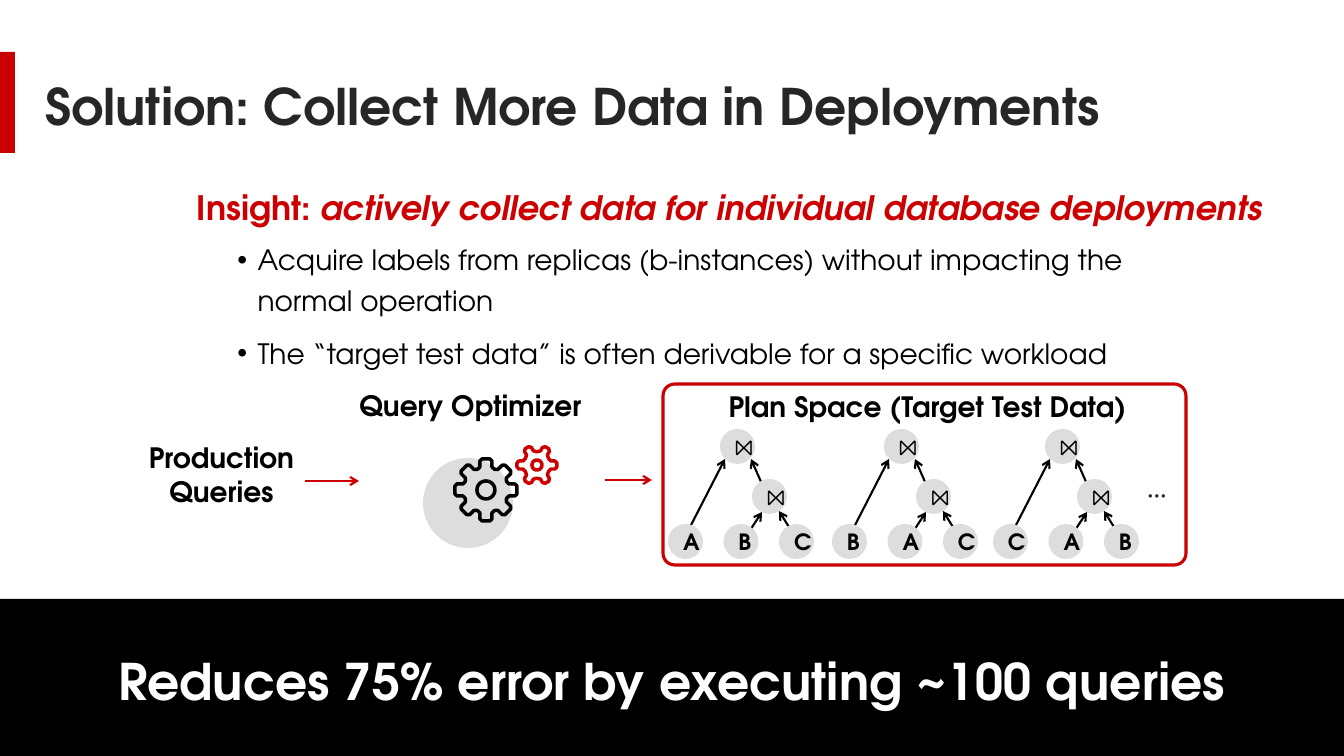
from math import cos, sin, pi
from lxml.etree import SubElement
from pptx import Presentation
from pptx.dml.color import RGBColor
from pptx.enum.shapes import MSO_CONNECTOR, MSO_SHAPE
from pptx.enum.text import MSO_ANCHOR, MSO_AUTO_SIZE, PP_ALIGN
from pptx.oxml.ns import qn
from pptx.util import Pt

FONT = "TeX Gyre Adventor"
HEX = {"bar": "C80000", "red": "CC0000", "black": "000000", "white": "FFFFFF",
       "ink": "262626", "grey": "DDDDDD"}

TITLE = "Solution: Collect More Data in Deployments"
POINTS = [
    "Acquire labels from replicas (b-instances) without impacting the normal operation",
    "The “target test data” is often derivable for a specific workload",
]
INSIGHT = ("Insight: ", "actively collect data for individual database deployments")
CLAIM = "Reduces 75% error by executing ~100 queries"

# Labels: box, lines, size, colour
LABELS = [
    ((47, 645, 1249, 72), [CLAIM], 36, "white"),
    ((342, 384, 257, 44), ["Query Optimizer"], 20, "black"),
    ((705, 385, 445, 44), ["Plan Space (Target Test Data)"], 20, "black"),
    ((93, 436, 257, 78), ["Production", "Queries"], 20, "black"),
]
FLOWS = [(305, 481, 359, 481), (605, 480, 652, 480)]

# Plan trees: left edge and leaf names; nodes and arrows are relative to the left edge
TREES = [(668, "ABC"), (832, "BAC"), (993, "CAB")]
NODE = 35
JOINS = [(52, 429), (84, 479)]
LEAF_Y, LEAF_GAP = 524, 55.5
EDGES = [(20, 531, 57, 459), (94, 484, 83, 459),
         (121, 527, 111, 511), (77, 538, 94, 512)]

# Gears: centre, teeth, half a tooth as (out, across), hub radius, colour
GEARS = [
    ((486, 490), 8, [(21, 8), (23, 6), (29, 6), (31, 4)], 9, "black"),
    ((537, 465), 6, [(12, 6), (14, 4), (18, 4), (20, 2)], 5, "red"),
]

UNIT = 914400 / 100.8


def emu(*nums):
    return [round(n * UNIT) for n in nums]


def rgb(name):
    return RGBColor.from_string(HEX[name])


def style(font, size, color, **more):
    look = {"name": FONT, "size": Pt(size), "bold": True, **more}
    for key, val in look.items():
        setattr(font, key, val)
    font.color.rgb = rgb(color)


def format_para(para, **look):
    for key, val in look.items():
        setattr(para, key, val)


def paint(item, fill=None, line=None, width=1):
    item.shadow.inherit = False
    if fill:
        item.fill.solid()
        item.fill.fore_color.rgb = rgb(fill)
    else:
        item.fill.background()
    if line:
        item.line.color.rgb = rgb(line)
        item.line.width = Pt(width)
    else:
        item.line.fill.background()


def add_shape(kind, box, **look):
    item = slide.shapes.add_shape(kind, *emu(*box))
    paint(item, **look)
    return item


def add_text(box, lines, size, color, **more):
    frame = slide.shapes.add_textbox(*emu(*box)).text_frame
    frame.word_wrap = True
    frame.text = "\n".join(lines)
    for para in frame.paragraphs:
        para.alignment = PP_ALIGN.CENTER
        style(para.runs[0].font, size, color, **more)


def add_arrow(ends, color):
    link = slide.shapes.add_connector(MSO_CONNECTOR.STRAIGHT, *emu(*ends))
    link.line.color.rgb = rgb(color)
    link.line.width = Pt(1.5)
    SubElement(link.line._get_or_add_ln(), qn("a:tailEnd"), type="arrow")
    SubElement(link._element.spPr, qn("a:effectLst"))


def add_node(left, top, text):
    node = add_shape(MSO_SHAPE.OVAL, (left, top, NODE, NODE), fill="grey")
    frame = node.text_frame
    frame.text = text
    frame.vertical_anchor = MSO_ANCHOR.MIDDLE
    frame.paragraphs[0].alignment = PP_ALIGN.CENTER
    style(frame.paragraphs[0].runs[0].font, 16, "black")


def add_gear(mid, teeth, half, hub, color):
    tooth = [(out, -side) for out, side in half] + half[::-1]

    def spin(out, side, turn):
        return emu(mid[0] + out * cos(turn) - side * sin(turn),
                   mid[1] + out * sin(turn) + side * cos(turn))

    rim = [spin(*spot, 2 * pi * n / teeth) for n in range(teeth) for spot in tooth]
    hole = [spin(hub, 0, 2 * pi * n / 24) for n in range(24)]
    pen = slide.shapes.build_freeform(*rim[0])
    pen.add_line_segments(rim[1:], close=True)
    pen.move_to(*hole[0])
    pen.add_line_segments(hole[1:], close=True)
    paint(pen.convert_to_shape(), line=color, width=2.5)


def place(item, box):
    for key, val in zip(("left", "top", "width", "height"), emu(*box)):
        setattr(item, key, val)
    item.text_frame.auto_size = MSO_AUTO_SIZE.NONE
    item.text_frame.word_wrap = True
    return item.text_frame


def add_bullet(para):
    props = para._p.get_or_add_pPr()
    props.set("marL", "548640")
    props.set("indent", "-182880")
    SubElement(props, qn("a:buFont"), typeface="Arial")
    SubElement(props, qn("a:buChar"), char="•")


deck = Presentation()
deck.slide_width, deck.slide_height = emu(1344, 756)
slide = deck.slides.add_slide(deck.slide_layouts[1])
title, body = slide.placeholders

frame = place(title, (35, 34, 1159, 151))
frame.text = TITLE
frame.vertical_anchor = MSO_ANCHOR.MIDDLE
format_para(frame.paragraphs[0], alignment=PP_ALIGN.LEFT, line_spacing=0.9)
style(frame.paragraphs[0].runs[0].font, 36, "ink")

frame = place(body, (187, 231, 989, 44))
frame.text = "\n".join(POINTS)
for para in frame.paragraphs:
    format_para(para, level=1, line_spacing=1.2, space_before=Pt(0), space_after=Pt(9))
    add_bullet(para)
    style(para.runs[0].font, 20, "black", bold=False)

frame = slide.shapes.add_textbox(*emu(187, 174, 1093, 54)).text_frame
frame.word_wrap = True
para = frame.paragraphs[0]
format_para(para, line_spacing=1.2, space_before=Pt(10))
for text, slant in zip(INSIGHT, (False, True)):
    run = para.add_run()
    run.text = text
    style(run.font, 24, "red", italic=slant)

add_shape(MSO_SHAPE.RECTANGLE, (0, 52, 15, 101), fill="bar")
add_shape(MSO_SHAPE.RECTANGLE, (0, 599, 1344, 157), fill="black")
add_shape(MSO_SHAPE.OVAL, (423, 458, 90, 90), fill="grey")
for gear in GEARS:
    add_gear(*gear)
for label in LABELS:
    add_text(*label)
add_text((1091, 475, 132, 37), ["•••"], 16, "ink", name="Montserrat", bold=False)

for left, names in TREES:
    for x1, y1, x2, y2 in EDGES:
        add_arrow((left + x1, y1, left + x2, y2), "black")
    for x, y in JOINS:
        add_node(left + x, y, "⨝")
    for n, name in enumerate(names):
        add_node(left + n * LEAF_GAP, LEAF_Y, name)

for ends in FLOWS:
    add_arrow(ends, "red")
panel = add_shape(MSO_SHAPE.ROUNDED_RECTANGLE, (663, 384, 523, 181), line="red", width=2.25)
panel.adjustments[0] = 0.065

deck.save("out.pptx")
